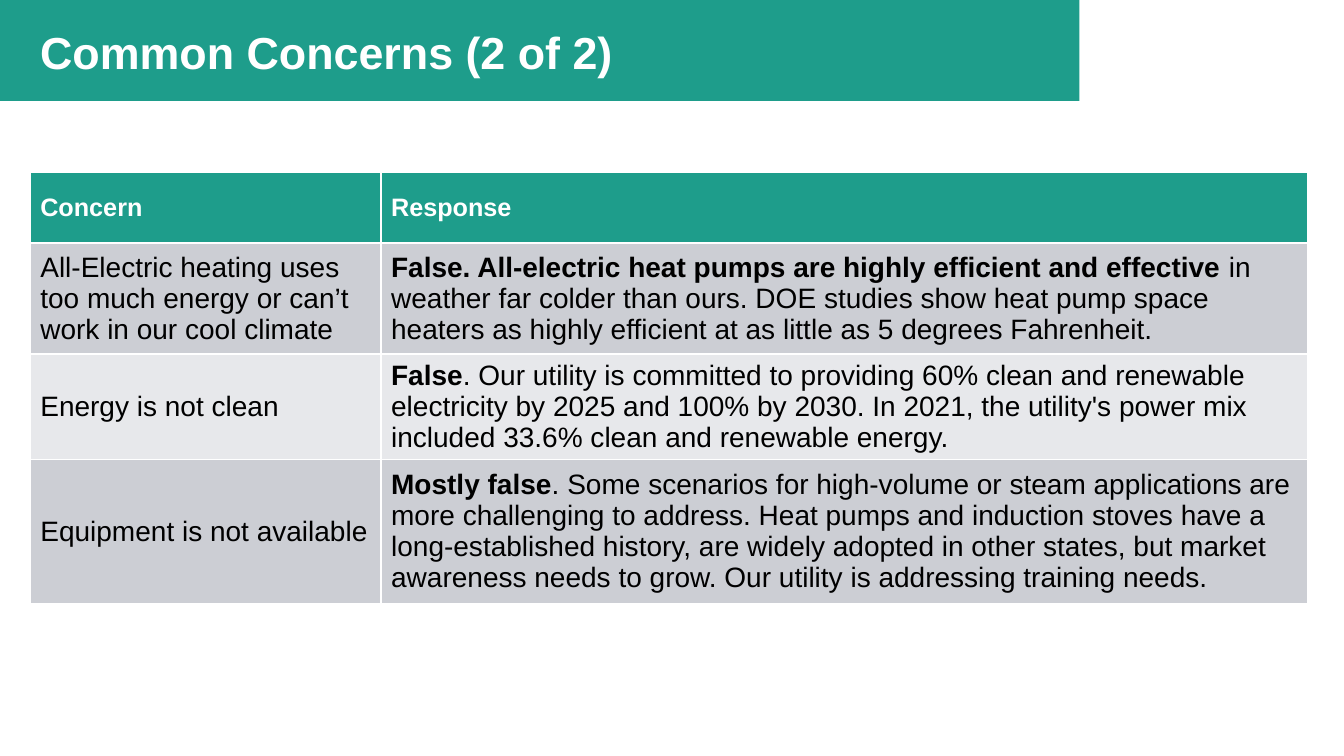
"""Build the second Common Concerns slide: a title band and a concern and response table."""
from pptx import Presentation
from pptx.dml.color import RGBColor
from pptx.enum.shapes import MSO_SHAPE
from pptx.enum.text import MSO_ANCHOR
from pptx.util import Pt

TITLE = "Common Concerns (2 of 2)"
HEADINGS = ("Concern", "Response")
CONCERNS = [
    ("All-Electric heating uses too much energy or can’t work in our cool climate",
     "False. All-electric heat pumps are highly efficient and effective",
     " in weather far colder than ours. DOE studies show heat pump space heaters as highly "
     "efficient at as little as 5 degrees Fahrenheit."),
    ("Energy is not clean",
     "False",
     ". Our utility is committed to providing 60% clean and renewable electricity by 2025 and "
     "100% by 2030. In 2021, the utility's power mix included 33.6% clean and renewable energy."),
    ("Equipment is not available",
     "Mostly false",
     ". Some scenarios for high-volume or steam applications are more challenging to address. "
     "Heat pumps and induction stoves have a long-established history, are widely adopted in "
     "other states, but market awareness needs to grow. Our utility is addressing training "
     "needs."),
]
TEAL, WHITE, BLACK = "1E9D8B", "FFFFFF", "000000"
STRIPES = ("CCCED4", "E7E8EB")
COLUMN_WIDTHS = (250.6, 661.7)
ROW_HEIGHTS = (50.4, 79.2, 74.6, 103)
LEFT, TABLE_TOP = 21.6, 123.2

TITLE_FORMAT = {"name": "Arial", "size": Pt(32), "bold": True}
HEADING_FORMAT = {"name": "Arial", "size": Pt(18), "bold": True}
BODY_FORMAT = {"name": "Arial", "size": Pt(20), "bold": False}
STRONG_FORMAT = {**BODY_FORMAT, "bold": True}
CELL_FORMAT = {"vertical_anchor": MSO_ANCHOR.MIDDLE,
               "margin_top": Pt(1.6), "margin_bottom": Pt(1.6)}


def assign(target, values):
    """Set attributes from a dict of format values."""
    for name, value in values.items():
        setattr(target, name, value)


def paint(fill, color):
    """Give a fill one solid colour."""
    fill.solid()
    fill.fore_color.rgb = RGBColor.from_string(color)


def write(para, pieces, color):
    """Add each (text, format) piece to a paragraph."""
    for text, values in pieces:
        span = para.add_run()
        span.text = text
        assign(span.font, values)
        paint(span.font.fill, color)


def add_title(page):
    """Draw the band and the title on it."""
    band = page.shapes.add_shape(MSO_SHAPE.RECTANGLE, Pt(0), Pt(-0.7), Pt(771), Pt(72.7))
    band.shadow.inherit = False
    paint(band.fill, TEAL)
    band.line.fill.background()
    box = page.shapes.add_textbox(Pt(LEFT), Pt(21.6), Pt(930), Pt(38.2))
    box.text_frame.word_wrap = True
    box.text_frame.vertical_anchor = MSO_ANCHOR.BOTTOM
    para = box.text_frame.paragraphs[0]
    para.line_spacing = 0.9
    write(para, [(TITLE, TITLE_FORMAT)], WHITE)


def add_concerns(page):
    """Fill the table, with striped rows under the heading row."""
    rows = [[[(heading, HEADING_FORMAT)] for heading in HEADINGS]]
    rows += [[[(concern, BODY_FORMAT)], [(verdict, STRONG_FORMAT), (reason, BODY_FORMAT)]]
             for concern, verdict, reason in CONCERNS]
    table = page.shapes.add_table(
        len(rows), len(HEADINGS), Pt(LEFT), Pt(TABLE_TOP),
        Pt(sum(COLUMN_WIDTHS)), Pt(sum(ROW_HEIGHTS))).table
    for column, width in zip(table.columns, COLUMN_WIDTHS):
        column.width = Pt(width)
    for index, (row, height, contents) in enumerate(zip(table.rows, ROW_HEIGHTS, rows)):
        row.height = Pt(height)
        fill, color = (STRIPES[(index - 1) % 2], BLACK) if index else (TEAL, WHITE)
        for cell, pieces in zip(row.cells, contents):
            paint(cell.fill, fill)
            assign(cell, CELL_FORMAT)
            write(cell.text_frame.paragraphs[0], pieces, color)


def main():
    """Create and save the deck."""
    deck = Presentation()
    deck.slide_width, deck.slide_height = Pt(960), Pt(540)
    page = deck.slides.add_slide(deck.slide_layouts[6])
    add_title(page)
    add_concerns(page)
    deck.save("out.pptx")


if __name__ == "__main__":
    main()
